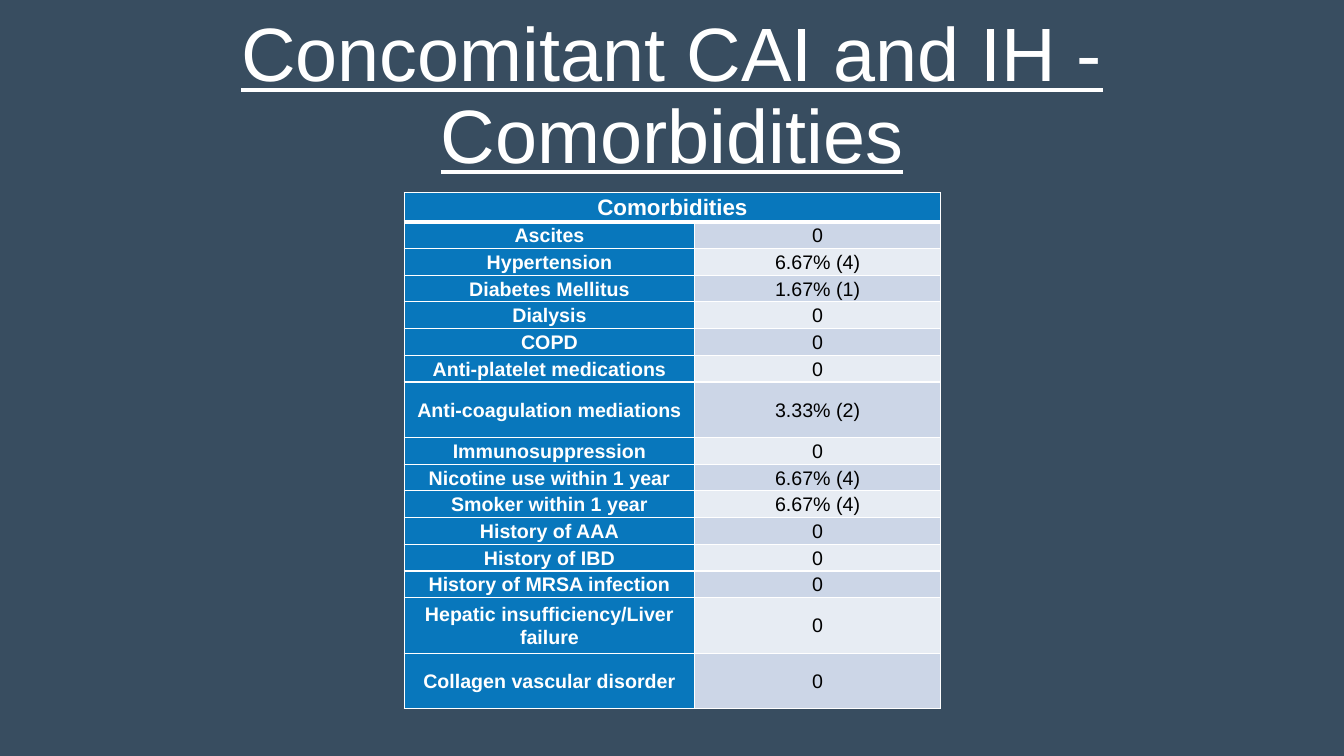
"""Build a slide with a table of comorbidities."""
from lxml import etree
from pptx import Presentation
from pptx.dml.color import RGBColor
from pptx.enum.text import MSO_ANCHOR, PP_ALIGN
from pptx.oxml.ns import qn
from pptx.util import Inches, Pt

MIDDLE, CENTER = MSO_ANCHOR.MIDDLE, PP_ALIGN.CENTER
FONT = "Arial"
WHITE, BLACK, NAVY, BLUE = "FFFFFF", "000000", "384D60", "0877BC"
BANDS = ("CCD6E7", "E7ECF3")

TITLE = "Concomitant CAI and IH - Comorbidities"
HEADER = "Comorbidities"
ROWS = [
    ("Ascites", "0"),
    ("Hypertension", "6.67% (4)"),
    ("Diabetes Mellitus", "1.67% (1)"),
    ("Dialysis", "0"),
    ("COPD", "0"),
    ("Anti-platelet medications", "0"),
    ("Anti-coagulation mediations", "3.33% (2)"),
    ("Immunosuppression", "0"),
    ("Nicotine use within 1 year", "6.67% (4)"),
    ("Smoker within 1 year", "6.67% (4)"),
    ("History of AAA", "0"),
    ("History of IBD", "0"),
    ("History of MRSA infection", "0"),
    ("Hepatic insufficiency/Liver failure", "0"),
    ("Collagen vascular disorder", "0"),
]
TALL_ROWS = {"Anti-coagulation mediations", "Hepatic insufficiency/Liver failure",
             "Collagen vascular disorder"}
LEFT, TOP, HEIGHT = 4.01, 1.91, 5.12
COL_WIDTHS = (2.88, 2.44)
HEADER_H, TALL_H = 0.29, 0.55
SHORT_H = (HEIGHT - HEADER_H - TALL_H * len(TALL_ROWS)) / (len(ROWS) - len(TALL_ROWS))


def rgb(color):
    return RGBColor.from_string(color)


def write(tf, text, size, color, spacing, bold=False):
    p = tf.paragraphs[0]
    p.text = text
    p.alignment = CENTER
    p.line_spacing = spacing
    p.font.name = FONT
    p.font.size = Pt(size)
    p.font.bold = bold
    p.font.color.rgb = rgb(color)
    return p


def style_cell(cell, fill, top=1, bottom=1):
    cell.vertical_anchor = MIDDLE
    cell.margin_left = cell.margin_right = Inches(0.07)
    cell.margin_top = cell.margin_bottom = 0
    tc_pr = cell._tc.get_or_add_tcPr()
    for side, width in (("L", 1), ("R", 1), ("T", top), ("B", bottom)):
        ln = etree.SubElement(tc_pr, qn("a:ln" + side), w=str(Pt(width)))
        solid = etree.SubElement(ln, qn("a:solidFill"))
        etree.SubElement(solid, qn("a:srgbClr"), val=WHITE)
    cell.fill.solid()
    cell.fill.fore_color.rgb = rgb(fill)


def add_title(s):
    tf = s.shapes.add_textbox(0, Inches(0.25), Inches(13.33), Inches(1.45)).text_frame
    tf.word_wrap = True
    tf.vertical_anchor = MIDDLE
    write(tf, TITLE, 54, WHITE, 0.9).font.underline = True


def add_comorbidities(s):
    table = s.shapes.add_table(len(ROWS) + 1, 2, Inches(LEFT), Inches(TOP),
                               Inches(sum(COL_WIDTHS)), Inches(HEIGHT)).table
    for col, width in zip(table.columns, COL_WIDTHS):
        col.width = Inches(width)

    table.rows[0].height = Inches(HEADER_H)
    for cell in table.rows[0].cells:
        style_cell(cell, BLUE, bottom=3)
    header = table.cell(0, 0)
    header.merge(table.cell(0, 1))
    write(header.text_frame, HEADER, 16, WHITE, 1.07, True)

    for i, (name, value) in enumerate(ROWS):
        row = table.rows[i + 1]
        row.height = Inches(TALL_H if name in TALL_ROWS else SHORT_H)
        label, figure = row.cells
        top = 3 if i == 0 else 1
        style_cell(label, BLUE, top)
        style_cell(figure, BANDS[i % 2], top)
        write(label.text_frame, name, 14, WHITE, 1.07, True)
        write(figure.text_frame, value, 14, BLACK, 1.07)


def main():
    prs = Presentation()
    prs.slide_width, prs.slide_height = Inches(13.33), Inches(7.5)
    s = prs.slides.add_slide(prs.slide_layouts[6])
    s.background.fill.solid()
    s.background.fill.fore_color.rgb = rgb(NAVY)
    add_title(s)
    add_comorbidities(s)
    prs.save("out.pptx")


if __name__ == "__main__":
    main()
